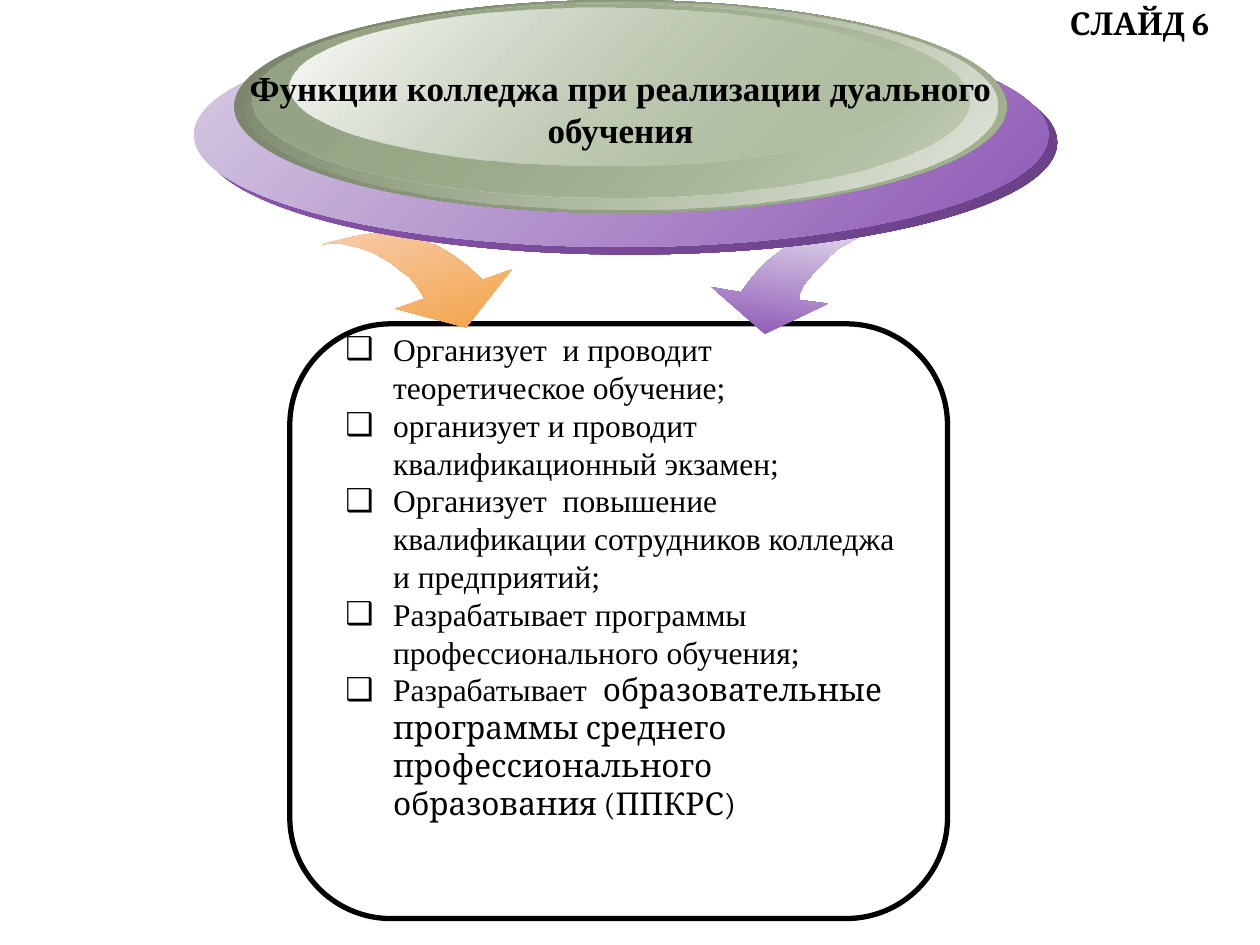
"""Build the slide on the college's functions in dual training."""
from dataclasses import dataclass

from lxml import etree
from pptx import Presentation
from pptx.dml.color import RGBColor
from pptx.enum.shapes import MSO_SHAPE
from pptx.enum.text import MSO_ANCHOR, MSO_AUTO_SIZE, PP_ALIGN
from pptx.oxml.ns import qn
from pptx.util import Inches, Pt

OVAL, ROUNDED = MSO_SHAPE.OVAL, MSO_SHAPE.ROUNDED_RECTANGLE
TOP, NO_FIT = MSO_ANCHOR.TOP, MSO_AUTO_SIZE.NONE
LEFT, CENTER = PP_ALIGN.LEFT, PP_ALIGN.CENTER
WIDTH, HEIGHT, COLUMNS = Inches(10), Inches(7.5), 1000
CELL = WIDTH // COLUMNS


@dataclass(frozen=True)
class Theme:
    """Colours, fonts and type sizes."""
    ink: str = "000000"
    white: str = "FFFFFF"
    orange: str = "F3A447"
    peach: str = "F7CBAB"
    violet: str = "8E58B6"
    plum: str = "684085"
    lilac: str = "D7CCE2"
    mist: str = "E3DCEB"
    moss: str = "768168"
    olive: str = "95A484"
    sage: str = "A5B592"
    pale: str = "E5E9E1"
    serif: str = "Times New Roman"
    accent: str = "Cambria"
    body: int = 18
    title: int = 20


@dataclass(frozen=True)
class Box:
    """A place in grid columns and rows."""
    x: int
    y: int
    w: int
    h: int

    def emu(self) -> tuple[int, ...]:
        """Return left, top, width and height in EMU."""
        return tuple(v * CELL for v in (self.x, self.y, self.w, self.h))


@dataclass(frozen=True)
class Gradient:
    """Two colours, their opacities in percent and a clockwise angle."""
    start: str
    end: str
    angle: float = 45
    start_alpha: int = 100
    end_alpha: int = 100


@dataclass(frozen=True)
class Oval:
    """One layer of the title badge."""
    box: Box
    fill: Gradient


@dataclass(frozen=True)
class Arrow:
    """A curved arrow outline."""
    points: tuple[tuple[int, int], ...]
    fill: Gradient


T = Theme()
OVALS = (
    Oval(Box(161, 24, 678, 178), Gradient(T.violet, T.plum)),
    Oval(Box(154, 18, 678, 178), Gradient(T.lilac, T.violet)),
    Oval(Box(186, 0, 613, 169), Gradient(T.moss, T.sage)),
    Oval(Box(194, 1, 598, 165), Gradient(T.sage, T.pale, start_alpha=0)),
    Oval(Box(200, 3, 569, 154), Gradient(T.olive, T.sage, end_alpha=48)),
    Oval(Box(230, 6, 501, 125), Gradient(T.white, T.sage, end_alpha=38)),
)
ARROWS = (
    Arrow(((256, 194), (271, 190), (285, 187), (298, 185), (311, 185), (323, 187),
           (335, 191), (347, 195), (359, 202), (371, 211), (383, 222), (406, 214),
           (370, 260), (314, 245), (337, 237), (334, 232), (330, 226), (325, 220),
           (318, 215), (311, 209), (304, 205), (295, 200), (287, 197), (278, 195),
           (270, 193), (263, 193)), Gradient(T.orange, T.peach, 251.5)),
    Arrow(((703, 184), (688, 182), (675, 182), (662, 183), (649, 185), (638, 189),
           (627, 194), (617, 201), (607, 209), (597, 220), (588, 232), (565, 228),
           (607, 265), (657, 241), (634, 238), (635, 232), (638, 226), (643, 220),
           (648, 214), (654, 208), (660, 202), (667, 196), (675, 192), (682, 188),
           (689, 186), (696, 184)), Gradient(T.violet, T.mist, 278)),
)
DUTIES = (
    ("Организует  и проводит теоретическое обучение;",),
    ("организует и проводит квалификационный экзамен;",),
    ("Организует  повышение квалификации сотрудников колледжа и предприятий;",),
    ("Разрабатывает программы профессионального обучения;",),
    ("Разрабатывает  ",
     "образовательные программы среднего профессионального образования (ППКРС)"),
)


def place(sp, box: Box) -> None:
    """Move a shape to its box."""
    sp.left, sp.top, sp.width, sp.height = box.emu()


def paint(sp, grad: Gradient) -> None:
    """Give a shape a gradient, no outline and no shadow."""
    sp.shadow.inherit = False
    sp.line.fill.background()
    sp.fill.gradient()
    sp.fill.gradient_angle = (360 - grad.angle) % 360
    pairs = ((grad.start, grad.start_alpha), (grad.end, grad.end_alpha))
    for stop, (color, alpha) in zip(sp.fill.gradient_stops, pairs):
        stop.color.rgb = RGBColor.from_string(color)
        if alpha < 100:
            clr = stop._gs.find(qn("a:srgbClr"))
            etree.SubElement(clr, qn("a:alpha")).set("val", str(alpha * 1000))


def add_oval(shapes, oval: Oval) -> None:
    """Draw one badge layer."""
    paint(shapes.add_shape(OVAL, *oval.box.emu()), oval.fill)


def add_arrow(shapes, arrow: Arrow) -> None:
    """Draw one curved arrow."""
    builder = shapes.build_freeform(*arrow.points[0], scale=CELL)
    builder.add_line_segments(arrow.points[1:], close=True)
    paint(builder.convert_to_shape(), arrow.fill)


def add_bullet(p, char: str, indent: int) -> None:
    """Give a paragraph a hanging bullet."""
    pPr = p._p.get_or_add_pPr()
    pPr.set("marL", str(indent))
    pPr.set("indent", str(-indent))
    etree.SubElement(pPr, qn("a:buChar")).set("char", char)


def write(sp, paras, *, fonts=(T.serif,), size=T.body, bold=False,
          align=LEFT, bullet="") -> None:
    """Fill a shape with paragraphs, each run taking the font at its index."""
    tf = sp.text_frame
    tf.word_wrap, tf.auto_size, tf.vertical_anchor = True, NO_FIT, TOP
    for i, runs in enumerate(paras):
        p = tf.add_paragraph() if i else tf.paragraphs[0]
        if bullet:
            add_bullet(p, bullet, 38 * CELL)
        p.alignment, p.space_before = align, Pt(0)
        for text, font in zip(runs, fonts):
            r = p.add_run()
            r.text = text
            r.font.name, r.font.size, r.font.bold = font, Pt(size), bold
            r.font.color.rgb = RGBColor.from_string(T.ink)


def main() -> None:
    """Build and save the slide."""
    prs = Presentation()
    prs.slide_width, prs.slide_height = WIDTH, HEIGHT
    slide = prs.slides.add_slide(prs.slide_layouts[1])
    shapes = slide.shapes
    title, body = slide.placeholders

    label = shapes.add_textbox(*Box(839, -2, 161, 46).emu())
    write(label, [("СЛАЙД 6",)], fonts=(T.accent,), bold=True)

    frame = shapes.add_shape(ROUNDED, *Box(230, 257, 522, 472).emu())
    frame.adjustments[0] = 0.17
    frame.shadow.inherit = False
    frame.fill.background()
    frame.line.color.rgb = RGBColor.from_string(T.ink)
    frame.line.width = Pt(3)

    place(body, Box(264, 257, 468, 592))
    write(body, DUTIES, fonts=(T.serif, T.accent), bullet="❑")
    shapes._spTree.append(body._element)

    for arrow in ARROWS:
        add_arrow(shapes, arrow)
    for oval in OVALS:
        add_oval(shapes, oval)

    place(title, Box(154, 48, 677, 77))
    write(title, [("Функции колледжа при реализации дуального обучения",)],
          size=T.title, bold=True, align=CENTER)
    shapes._spTree.append(title._element)
    prs.save("out.pptx")


if __name__ == "__main__":
    main()
